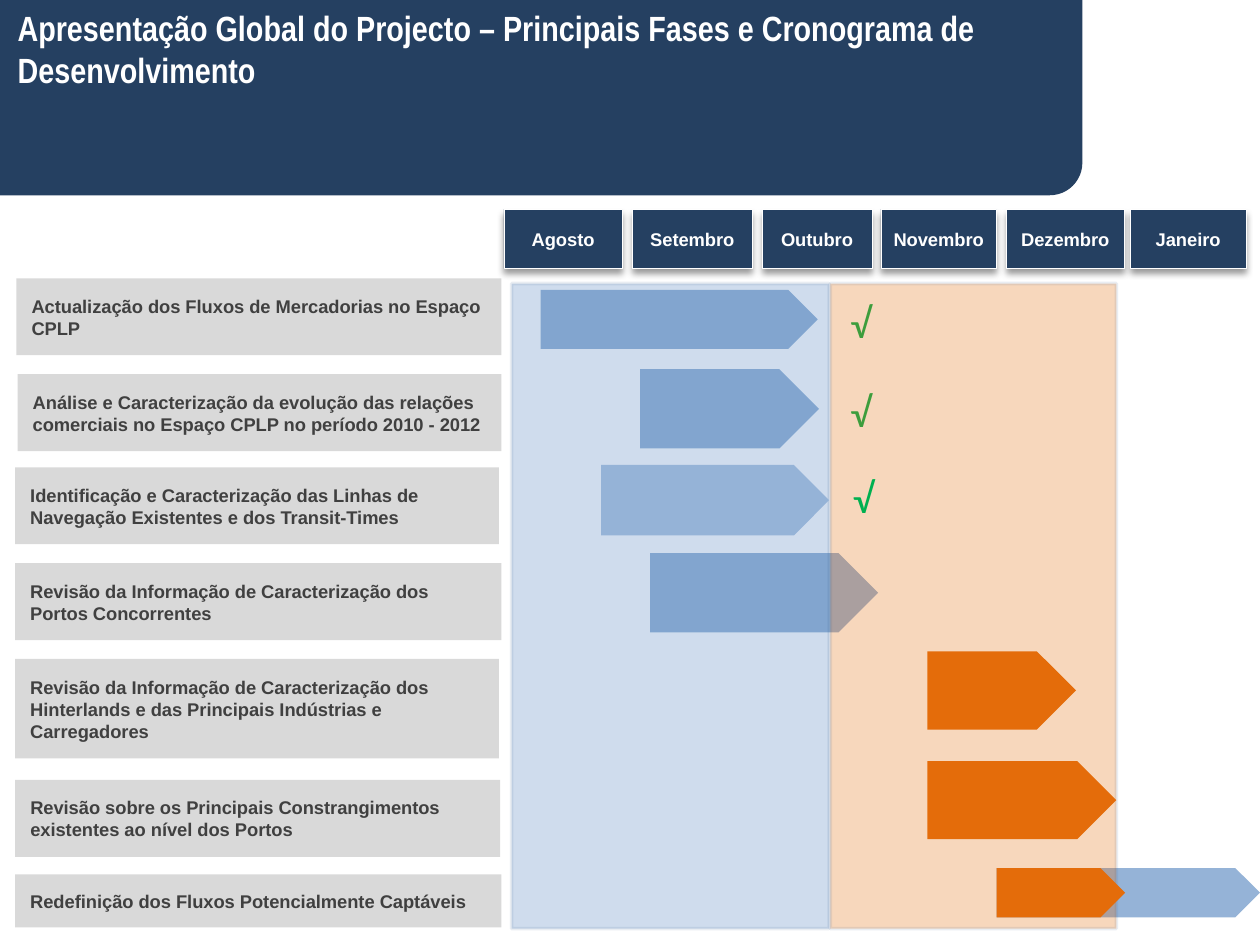
"""Builds a project schedule slide with phases, months and progress bars."""
from lxml.etree import SubElement
from pptx import Presentation
from pptx.dml.color import RGBColor
from pptx.enum.shapes import MSO_SHAPE
from pptx.enum.text import MSO_ANCHOR, MSO_AUTO_SIZE, PP_ALIGN
from pptx.oxml.ns import qn
from pptx.util import Inches, Pt

THEME = {
    "navy": "254061", "white": "FFFFFF", "grey": "D9D9D9", "text": "404040",
    "blue": "95B3D7", "orange": "E46C0A", "period_blue": "4F81BD",
    "period_line": "3A5F8C", "green": "00B050",
    "font": "Arial", "title_font": "Arial Narrow", "check_font": "Calibri",
    "title_size": 20, "label_size": 10.5, "check_size": 24,
}
TITLE = "Apresentação Global do Projecto – Principais Fases e Cronograma de Desenvolvimento"
MONTHS = [("Agosto", 4, 0.94), ("Setembro", 5.02, 0.95), ("Outubro", 6.05, 0.87),
          ("Novembro", 6.99, 0.92), ("Dezembro", 7.99, 0.93), ("Janeiro", 8.97, 0.92)]
PHASES = [
    ("Actualização dos Fluxos de Mercadorias no Espaço CPLP", 0.13, 2.21, 3.85, 0.61),
    ("Análise e Caracterização da evolução das relações comerciais no Espaço CPLP "
     "no período 2010 - 2012", 0.14, 2.97, 3.84, 0.61),
    ("Identificação e Caracterização das Linhas de Navegação Existentes e dos "
     "Transit-Times", 0.12, 3.71, 3.84, 0.61),
    ("Revisão da Informação de Caracterização dos Portos Concorrentes",
     0.12, 4.47, 3.86, 0.61),
    ("Revisão da Informação de Caracterização dos Hinterlands e das Principais "
     "Indústrias e Carregadores", 0.12, 5.23, 3.84, 0.79),
    ("Revisão sobre os Principais Constrangimentos existentes ao nível dos Portos",
     0.12, 6.19, 3.85, 0.61),
    ("Redefinição dos Fluxos Potencialmente Captáveis", 0.12, 6.94, 3.86, 0.42),
]
EARLY_BARS = [(4.29, 2.3, 2.2, 0.47), (5.08, 2.93, 1.42, 0.63),
              (5.16, 4.39, 1.81, 0.63), (7.91, 6.89, 2.09, 0.39)]
LATE_BARS = [("orange", 7.36, 6.04, 1.5, 0.62), ("orange", 7.91, 6.89, 1.02, 0.39),
             ("orange", 7.36, 5.17, 1.18, 0.62), ("blue", 4.77, 3.69, 1.81, 0.56)]
EARLY_CHECKS = [(6.65, 2.3), (6.65, 3.01)]
LATE_CHECK = (6.67, 3.69)


def rgb(name):
    return RGBColor.from_string(THEME[name])


def set_alpha(fill, percent):
    SubElement(fill, qn("a:alpha")).set("val", str(percent * 1000))


def add_box(s, kind, color, *box):
    sp = s.shapes.add_shape(kind, *map(Inches, box))
    sp.shadow.inherit = False
    sp.fill.solid()
    sp.fill.fore_color.rgb = rgb(color)
    sp.line.fill.background()
    return sp


def write(tf, text, color, size, font, bold=True, align=PP_ALIGN.LEFT):
    tf.word_wrap = True
    p = tf.paragraphs[0]
    p.text = text
    p.alignment = align
    p.font.size = Pt(THEME[size])
    p.font.name = THEME[font]
    p.font.bold = bold
    p.font.color.rgb = rgb(color)


def add_phase(s, text, *box):
    tf = add_box(s, MSO_SHAPE.RECTANGLE, "grey", *box).text_frame
    tf.margin_left = tf.margin_right = tf.margin_top = tf.margin_bottom = Inches(0.12)
    tf.vertical_anchor = MSO_ANCHOR.MIDDLE
    write(tf, text, "text", "label_size", "font")


def add_month(s, text, left, width):
    sp = add_box(s, MSO_SHAPE.RECTANGLE, "navy", left, 1.66, width, 0.47)
    sp.line.color.rgb = rgb("white")
    sp.line.width = Pt(0.25)
    effects = sp.element.spPr.find(qn("a:effectLst"))
    shadow = SubElement(effects, qn("a:outerShdw"), blurRad=str(Pt(4)),
                        dist=str(Pt(3)), dir="5400000", rotWithShape="0")
    set_alpha(SubElement(shadow, qn("a:srgbClr"), val="000000"), 40)
    sp.text_frame.vertical_anchor = MSO_ANCHOR.MIDDLE
    write(sp.text_frame, text, "white", "label_size", "font", align=PP_ALIGN.CENTER)


def add_period(s, color, left, width):
    sp = add_box(s, MSO_SHAPE.RECTANGLE, color, left, 2.25, width, 5.12)
    sp.line.color.rgb = rgb("period_line")
    sp.line.width = Pt(2)
    fill, line = sp.element.spPr.iter(qn("a:srgbClr"))
    set_alpha(fill, 27)
    set_alpha(line, 11)


def add_check(s, left, top):
    tb = s.shapes.add_textbox(*map(Inches, (left, top, 0.39, 0.51)))
    write(tb.text_frame, "√", "green", "check_size", "check_font", bold=False)


def place_title(s):
    sp = s.shapes.title
    sp.left, sp.top, sp.width, sp.height = map(Inches, (-0.12, 0, 8.66, 0.84))
    tf = sp.text_frame
    tf.auto_size = MSO_AUTO_SIZE.NONE
    tf.vertical_anchor = MSO_ANCHOR.TOP
    write(tf, TITLE, "white", "title_size", "title_font")
    pPr = tf.paragraphs[0]._p.get_or_add_pPr()
    pPr.set("marL", str(Inches(0.16)))
    pPr.set("indent", "0")
    sp.element.getparent().append(sp.element)


def main():
    prs = Presentation()
    prs.slide_width, prs.slide_height = Inches(10), Inches(7.5)
    s = prs.slides.add_slide(prs.slide_layouts[5])
    add_box(s, MSO_SHAPE.ROUND_2_DIAG_RECTANGLE, "navy", 0, 0, 8.59, 1.55)
    corner = add_box(s, MSO_SHAPE.ROUND_2_DIAG_RECTANGLE, "navy", 0, 0, 7.64, 0.9)
    corner.adjustments[0] = 0
    for phase in PHASES:
        add_phase(s, *phase)
    for month in MONTHS:
        add_month(s, *month)
    for bar in EARLY_BARS:
        add_box(s, MSO_SHAPE.PENTAGON, "blue", *bar)
    add_period(s, "period_blue", 4.06, 2.52)
    for check in EARLY_CHECKS:
        add_check(s, *check)
    add_period(s, "orange", 6.59, 2.27)
    for bar in LATE_BARS:
        add_box(s, MSO_SHAPE.PENTAGON, *bar)
    add_check(s, *LATE_CHECK)
    place_title(s)
    prs.save("out.pptx")


if __name__ == "__main__":
    main()
